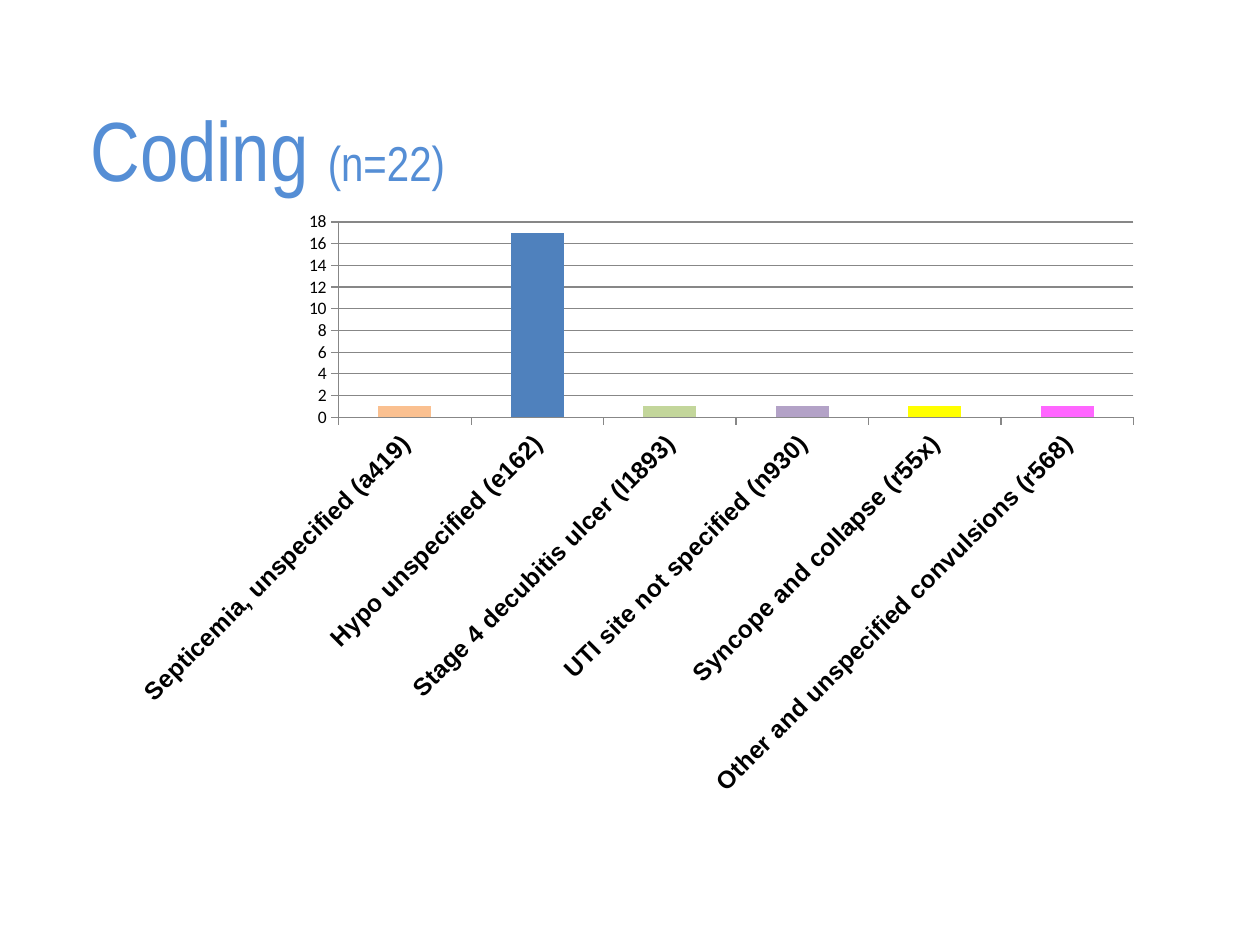
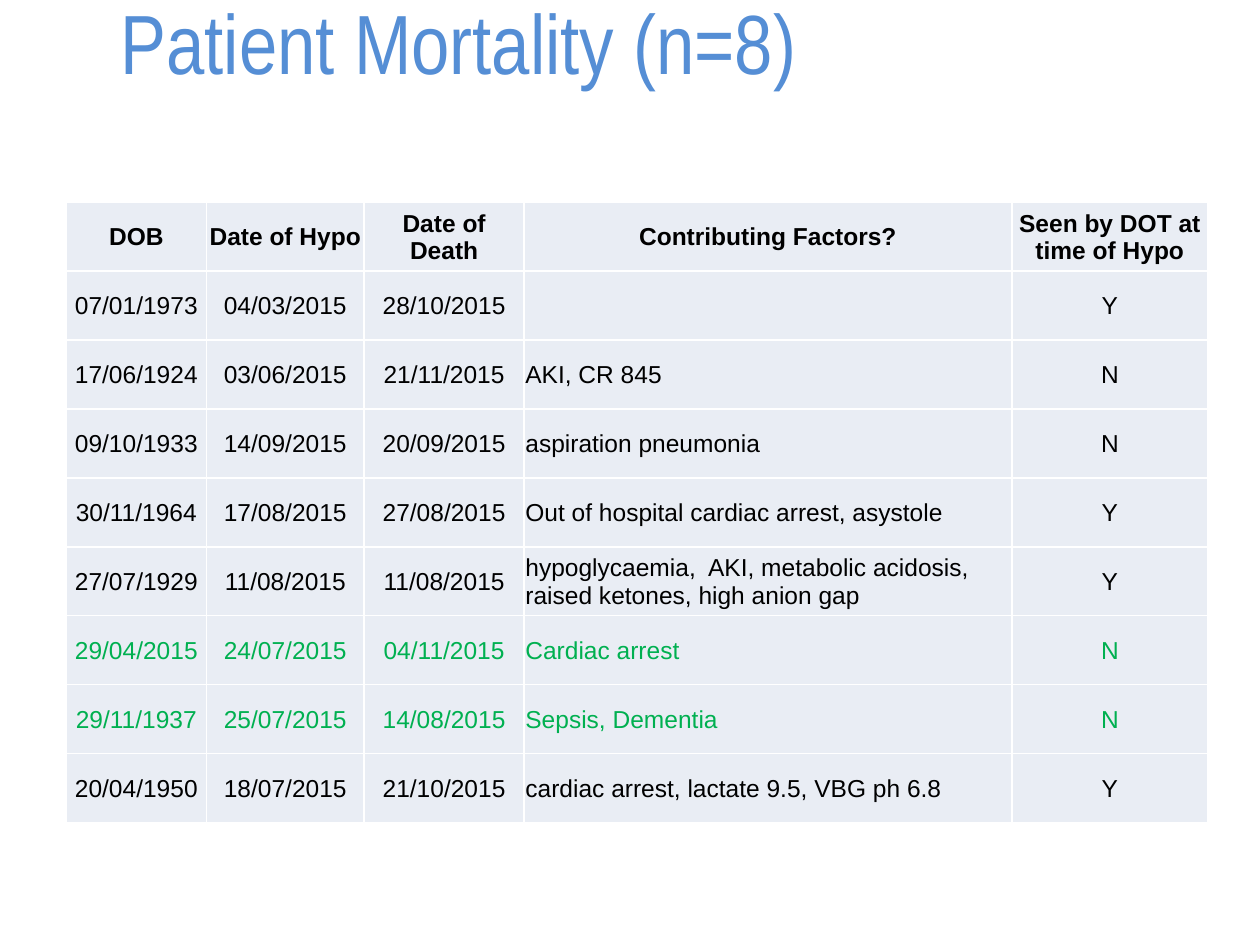
from lxml.etree import SubElement
from pptx import Presentation
from pptx.chart.data import CategoryChartData
from pptx.dml.color import RGBColor
from pptx.enum.chart import XL_CHART_TYPE, XL_TICK_MARK
from pptx.enum.text import MSO_ANCHOR, PP_ALIGN
from pptx.oxml import parse_xml
from pptx.oxml.ns import nsdecls, qn
from pptx.util import Pt

TITLE_BLUE = "558ED5"
BLACK = "000000"
WHITE = "FFFFFF"
GREEN = "00B050"
CELL_FILL = "E9EDF4"
AXIS_GREY = "878787"
BAR_BLUE = "4F81BD"

CODES = [
    ("Septicemia, unspecified (a419)", 1, "FAC090"),
    ("Hypo unspecified (e162)", 17, BAR_BLUE),
    ("Stage 4 decubitis ulcer (l1893)", 1, "C3D69B"),
    ("UTI site not specified (n930)", 1, "B3A2C7"),
    ("Syncope and collapse (r55x)", 1, "FFFF00"),
    ("Other and unspecified convulsions (r568)", 1, "FF66FF"),
]

HEADINGS = ("DOB", "Date of Hypo", "Date of Death", "Contributing Factors?",
            "Seen by DOT at time of Hypo")
PATIENTS = [
    ("07/01/1973", "04/03/2015", "28/10/2015", "", "Y"),
    ("17/06/1924", "03/06/2015", "21/11/2015", "AKI, CR 845", "N"),
    ("09/10/1933", "14/09/2015", "20/09/2015", "aspiration pneumonia", "N"),
    ("30/11/1964", "17/08/2015", "27/08/2015",
     "Out of hospital cardiac arrest, asystole", "Y"),
    ("27/07/1929", "11/08/2015", "11/08/2015",
     "hypoglycaemia,  AKI, metabolic acidosis, raised ketones, high anion gap", "Y"),
    ("29/04/2015", "24/07/2015", "04/11/2015", "Cardiac arrest", "N"),
    ("29/11/1937", "25/07/2015", "14/08/2015", "Sepsis, Dementia", "N"),
    ("20/04/1950", "18/07/2015", "21/10/2015",
     "cardiac arrest, lactate 9.5, VBG ph 6.8", "Y"),
]
GREEN_ROWS = (6, 7)
FACTORS_COLUMN = 3
COLUMN_WIDTHS = (80.3, 90, 91.5, 278.7, 112)
ROW_HEIGHT = 39.4


def rgb(color):
    return RGBColor.from_string(color)


def format_font(font, size, name, color=BLACK, bold=False):
    font.size, font.name, font.bold = Pt(size), name, bold
    font.color.rgb = rgb(color)


def add_text(para, text, **style):
    """Append a formatted run to a paragraph."""
    span = para.add_run()
    span.text = text
    format_font(span.font, **style)


def add_title(page, left, top, height, *parts):
    """Add a bottom-anchored title made of (text, size) parts."""
    box = page.shapes.add_textbox(Pt(left), Pt(top), Pt(628.6), Pt(height))
    frame = box.text_frame
    frame.word_wrap = True
    frame.vertical_anchor = MSO_ANCHOR.BOTTOM
    for text, size in parts:
        add_text(frame.paragraphs[0], text, size=size, name="Arial Narrow",
                 color=TITLE_BLUE)


def place_plot(chart, **fractions):
    """Fix the inner plot area as fractions of the chart's size."""
    plot_area = chart.plots[0]._element.getparent()
    for old in plot_area.findall(qn("c:layout")):
        plot_area.remove(old)
    layout = parse_xml(f"<c:layout {nsdecls('c')}/>")
    manual = SubElement(layout, qn("c:manualLayout"))
    settings = {"layoutTarget": "inner", "xMode": "edge", "yMode": "edge", **fractions}
    for tag, value in settings.items():
        SubElement(manual, qn(f"c:{tag}")).set("val", str(value))
    plot_area.insert(0, layout)


def add_code_chart(page):
    data = CategoryChartData()
    data.categories = [name for name, _, _ in CODES]
    data.add_series("Series 1", [count for _, count, _ in CODES])
    chart = page.shapes.add_chart(XL_CHART_TYPE.COLUMN_CLUSTERED, Pt(69.8), Pt(113),
                                  Pt(589.7), Pt(348.5), data).chart
    chart.has_legend = chart.has_title = False
    format_font(chart.font, 10, "Calibri")

    plot = chart.plots[0]
    plot.gap_width = 150
    plot.vary_by_categories = False
    bars = plot.series[0]
    bars.format.fill.solid()
    bars.format.fill.fore_color.rgb = rgb(BAR_BLUE)
    for index, (_, _, color) in enumerate(CODES):
        if color != BAR_BLUE:
            fill = bars.points[index].format.fill
            fill.solid()
            fill.fore_color.rgb = rgb(color)

    codes, counts = chart.category_axis, chart.value_axis
    format_font(codes.tick_labels.font, 14, "Arial", bold=True)
    codes._element.find(qn("c:txPr")).find(qn("a:bodyPr")).set("rot", "-2700000")
    format_font(counts.tick_labels.font, 10, "Calibri")
    counts.minimum_scale, counts.maximum_scale, counts.major_unit = 0, 18, 2
    counts.has_major_gridlines = True
    for axis in (codes, counts):
        axis.major_tick_mark = XL_TICK_MARK.OUTSIDE
    for part in (codes, counts, counts.major_gridlines):
        part.format.line.color.rgb = rgb(AXIS_GREY)
        part.format.line.width = Pt(0.75)
    place_plot(chart, x=0.21, y=0.04, w=0.77, h=0.32)


def add_borders(cell, color, width):
    properties = cell._tc.get_or_add_tcPr()
    for side in "LRTB":
        line = SubElement(properties, qn(f"a:ln{side}"), w=str(Pt(width)))
        fill = SubElement(line, qn("a:solidFill"))
        SubElement(fill, qn("a:srgbClr"), val=color)


def fill_cell(cell, text, align, **style):
    cell.margin_left = cell.margin_right = cell.margin_top = Pt(0.7)
    cell.margin_bottom = 0
    cell.vertical_anchor = MSO_ANCHOR.MIDDLE
    add_borders(cell, WHITE, 1)
    cell.fill.solid()
    cell.fill.fore_color.rgb = rgb(CELL_FILL)
    para = cell.text_frame.paragraphs[0]
    para.alignment = align
    if text:
        add_text(para, text, size=14, name="Arial", **style)


def add_mortality_table(page):
    rows = [HEADINGS, *PATIENTS]
    table = page.shapes.add_table(len(rows), len(HEADINGS), Pt(37.8), Pt(115.6),
                                  Pt(sum(COLUMN_WIDTHS)),
                                  Pt(ROW_HEIGHT * len(rows))).table
    table.first_row = table.horz_banding = False
    for column, width in zip(table.columns, COLUMN_WIDTHS):
        column.width = Pt(width)
    for row_index, texts in enumerate(rows):
        table.rows[row_index].height = Pt(ROW_HEIGHT)
        is_heading = row_index == 0
        color = GREEN if row_index in GREEN_ROWS else BLACK
        for column_index, text in enumerate(texts):
            is_factor = column_index == FACTORS_COLUMN and not is_heading
            fill_cell(table.cell(row_index, column_index), text,
                      PP_ALIGN.LEFT if is_factor else PP_ALIGN.CENTER,
                      color=color, bold=is_heading)


def main():
    deck = Presentation()
    deck.slide_width, deck.slide_height = Pt(720), Pt(540)
    blank = deck.slide_layouts[6]

    coding = deck.slides.add_slide(blank)
    add_code_chart(coding)
    add_title(coding, 44.6, 49, 67.7, ("Coding ", 48), ("(n=22)", 28))

    mortality = deck.slides.add_slide(blank)
    add_mortality_table(mortality)
    add_title(mortality, 61.9, 0, 56, ("Patient Mortality (n=8)", 48))

    deck.save("out.pptx")


if __name__ == "__main__":
    main()
